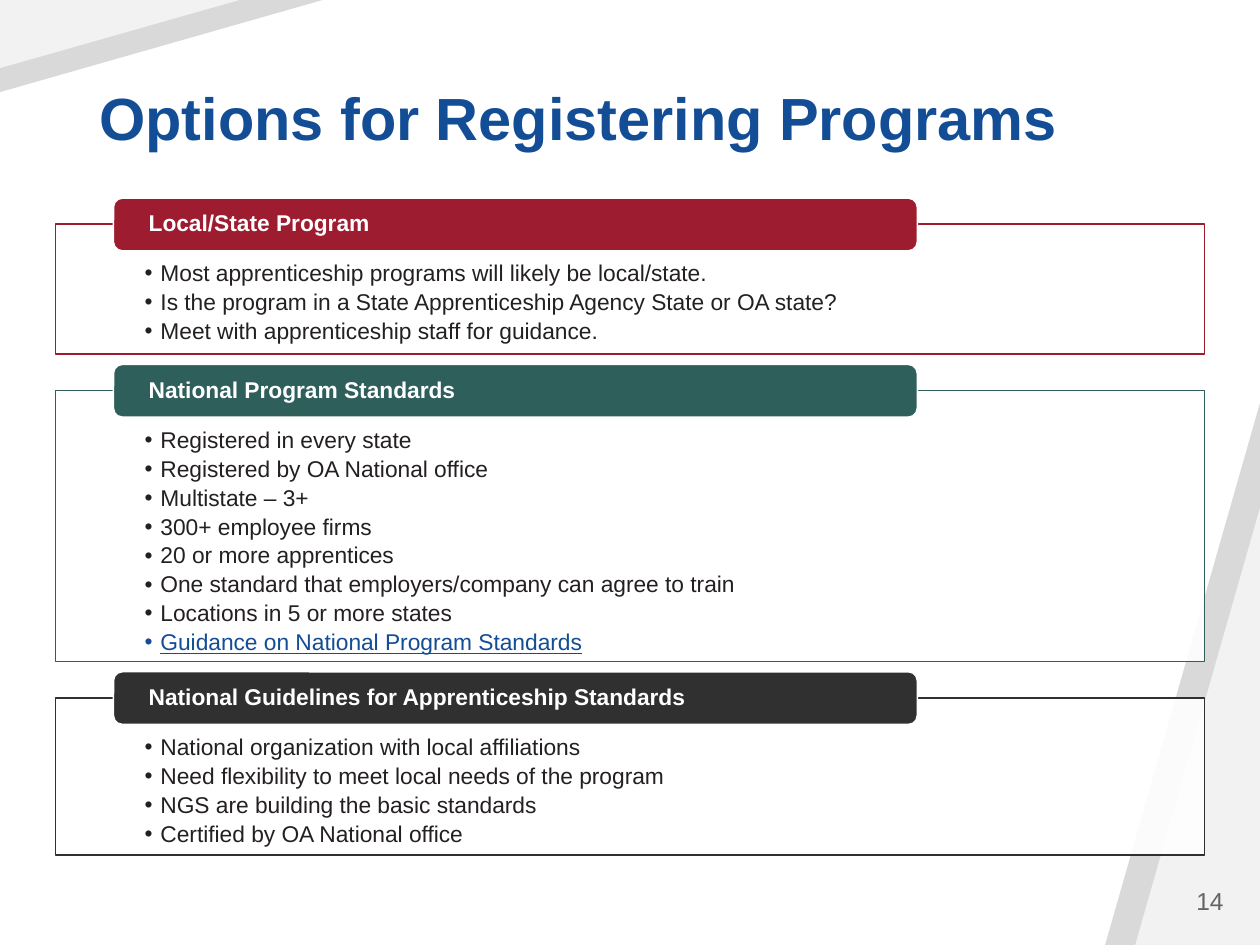
from lxml import etree
from pptx import Presentation
from pptx.dml.color import RGBColor
from pptx.enum.shapes import MSO_SHAPE
from pptx.enum.text import MSO_ANCHOR, MSO_AUTO_SIZE, PP_ALIGN
from pptx.oxml.ns import qn
from pptx.util import Pt

RECTANGLE, ROUNDED = MSO_SHAPE.RECTANGLE, MSO_SHAPE.ROUNDED_RECTANGLE
TRIANGLE = MSO_SHAPE.ISOSCELES_TRIANGLE
TOP, MIDDLE, BOTTOM = MSO_ANCHOR.TOP, MSO_ANCHOR.MIDDLE, MSO_ANCHOR.BOTTOM
LEFT, RIGHT = PP_ALIGN.LEFT, PP_ALIGN.RIGHT

COLORS = {
    "band": "D9D9D9", "corner": "F2F2F2", "white": "FFFFFF",
    "blue": "124D95", "ink": "242021", "number": "646464",
    "red": "9E1C30", "green": "2E5F5B", "charcoal": "303030",
}
LINK = "Guidance on National Program Standards"
SECTIONS = [
    ("Local/State Program", "red", 74.2, [
        "Most apprenticeship programs will likely be local/state.",
        "Is the program in a State Apprenticeship Agency State or OA state?",
        "Meet with apprenticeship staff for guidance.",
    ]),
    ("National Program Standards", "green", 154.8, [
        "Registered in every state",
        "Registered by OA National office",
        "Multistate – 3+",
        "300+ employee firms",
        "20 or more apprentices",
        "One standard that employers/company can agree to train",
        "Locations in 5 or more states",
        LINK,
    ]),
    ("National Guidelines for Apprenticeship Standards", "charcoal", 90, [
        "National organization with local affiliations",
        "Need flexibility to meet local needs of the program",
        "NGS are building the basic standards",
        "Certified by OA National office",
    ]),
]
SECTION_GAP = 20.8

prs = Presentation()
prs.slide_width, prs.slide_height = Pt(720), Pt(540)
slide = prs.slides.add_slide(prs.slide_layouts[5])


def add_filled(kind, left, top, width, height, fill, line=None):
    shape = slide.shapes.add_shape(kind, Pt(left), Pt(top), Pt(width), Pt(height))
    shape.shadow.inherit = False
    shape.fill.solid()
    shape.fill.fore_color.rgb = RGBColor.from_string(COLORS[fill])
    if line:
        shape.line.color.rgb = RGBColor.from_string(COLORS[line])
        shape.line.width = Pt(1)
    else:
        shape.line.fill.background()
    return shape


def style_run(paragraph, size, color, bold=False):
    font = paragraph.runs[0].font
    font.name, font.size, font.bold = "Arial", Pt(size), bold
    font.color.rgb = RGBColor.from_string(COLORS[color])
    return font


# Corner wedges: the right angle sits bottom right, or top left when turned
for width, height, fill in [(88.5, 309.6, "band"), (71.3, 249.8, "corner")]:
    wedge = add_filled(TRIANGLE, 720 - width, 540 - height, width, height, fill)
    wedge.adjustments[0] = 1
for width, height, fill in [(184.3, 52.6, "band"), (136.8, 38.9, "corner")]:
    wedge = add_filled(TRIANGLE, 0, 0, width, height, fill)
    wedge.adjustments[0] = 1
    wedge.rotation = 180

title = slide.shapes.title
title.left, title.top, title.width, title.height = Pt(49.7), Pt(28.8), Pt(626.4), Pt(62.6)
title.text_frame.text = "Options for Registering Programs"
title.text_frame.auto_size = MSO_AUTO_SIZE.NONE
title.text_frame.vertical_anchor = BOTTOM
heading = title.text_frame.paragraphs[0]
heading.alignment = LEFT
heading.line_spacing = 0.9
style_run(heading, 34, "blue", bold=True)

panel_top = 128.2
for name, color, height, points in SECTIONS:
    panel = add_filled(RECTANGLE, 31.7, panel_top, 656.6, height, "white", color)
    white = panel.fill._xPr.find(qn("a:solidFill"))[0]
    etree.SubElement(white, qn("a:alpha"), val="90000")
    body = panel.text_frame
    body.margin_left = body.margin_right = Pt(51)
    body.margin_top, body.margin_bottom = Pt(21.6), Pt(7.2)
    body.vertical_anchor = TOP
    body.text = "\n".join(points)
    for paragraph in body.paragraphs:
        paragraph.alignment = LEFT
        paragraph.line_spacing = 0.9
        paragraph.space_after = Pt(2.5)
        properties = paragraph._p.get_or_add_pPr()
        properties.set("marL", str(Pt(9)))
        properties.set("indent", str(-Pt(9)))
        etree.SubElement(properties, qn("a:buFont"), typeface="Arial")
        etree.SubElement(properties, qn("a:buChar"), char="•")
        is_link = paragraph.text == LINK
        font = style_run(paragraph, 13, "blue" if is_link else "ink")
        font.underline = is_link

    header = add_filled(ROUNDED, 64.8, panel_top - 15, 459.4, 30.2, color, "white")
    label = header.text_frame
    label.margin_left = label.margin_right = Pt(18.7)
    label.margin_top = label.margin_bottom = 0
    label.vertical_anchor = MIDDLE
    label.text = name
    label.paragraphs[0].alignment = LEFT
    label.paragraphs[0].line_spacing = 0.9
    style_run(label.paragraphs[0], 13, "white", bold=True)

    panel_top += height + SECTION_GAP

page_number = slide.shapes.add_textbox(Pt(605.5), Pt(500.4), Pt(100.8), Pt(28.8)).text_frame
page_number.word_wrap = True
page_number.vertical_anchor = MIDDLE
page_number.text = "14"
page_number.paragraphs[0].alignment = RIGHT
style_run(page_number.paragraphs[0], 14, "number")

prs.save("out.pptx")
